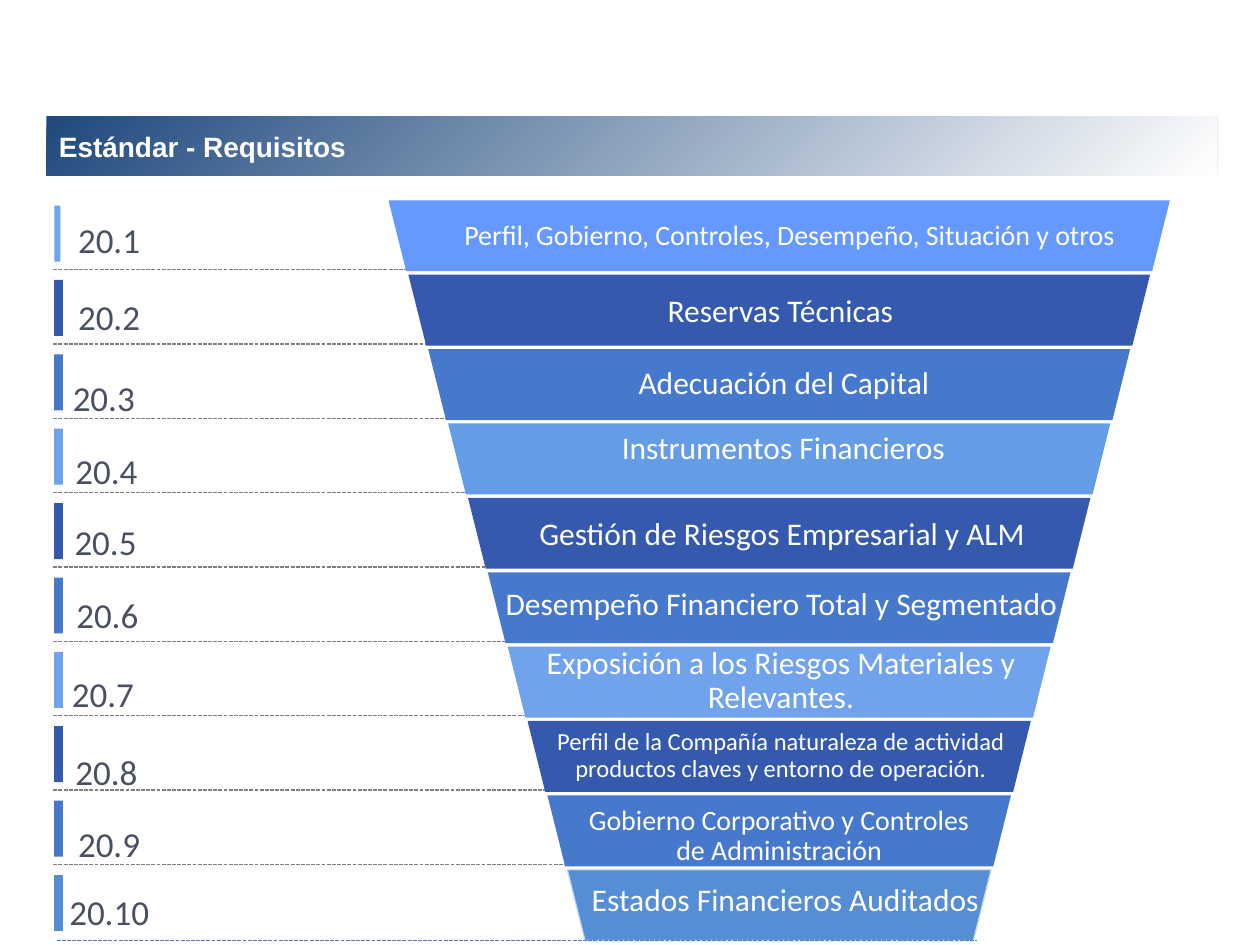
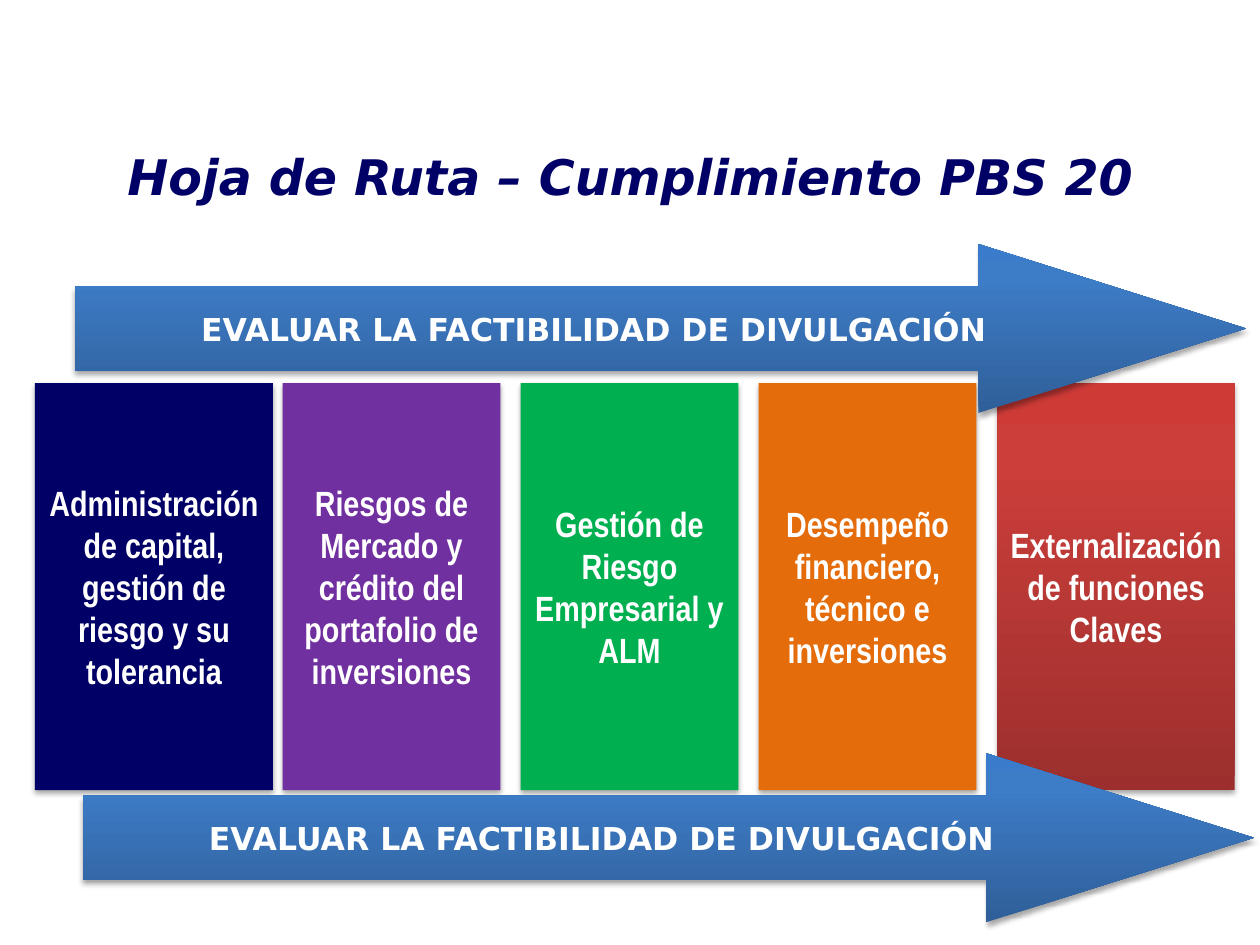
"""Build two slides on the PBS 20 disclosure standard: its requirements funnel and its roadmap."""
from lxml import etree
from pptx import Presentation
from pptx.dml.color import RGBColor as RGB
from pptx.enum.dml import MSO_LINE as DASH
from pptx.enum.shapes import MSO_CONNECTOR as CONN, MSO_SHAPE as SHAPE
from pptx.enum.text import MSO_ANCHOR as ANCHOR, MSO_AUTO_SIZE as AUTO, PP_ALIGN as ALIGN
from pptx.oxml.ns import qn
from pptx.util import Pt

COLORS = {
    "white": "FFFFFF", "number": "495061", "rule": "7F7F7F", "last_rule": "4B7EBC",
    "periwinkle": "6699FF", "royal": "3459AD", "blue": "4678CC", "sky": "649CE6",
    "light": "70A3EB", "steel": "558ED5", "pale": "C6D9F1", "band": "1F497D",
    "navy": "000066", "purple": "7030A0", "green": "00B050", "orange": "E46C0A",
}
RED_STOPS = [(0, "9C2F2D"), (80, "CB3E3A"), (100, "CE3B37")]
ARROW_STOPS = [(0, "2F5F99"), (80, "3D7CC7"), (100, "3A7CCB")]
BAND_STOPS = [(0, COLORS["white"]), (100, COLORS["band"])]

FUNNEL_TOP, FUNNEL_LEFT, FUNNEL_WIDTH = 114.5, 222, 446.5
ROW_PITCH, ROW_HEIGHT, ROW_INSET = 42.5, 40.5, 11.35

REQUIREMENTS = [
    ("Perfil, Gobierno, Controles, Desempeño, Situación y otros", 16, 1,
     "periwinkle", "light", (244, 120.5, 414.5), (37.5, 121.5)),
    ("Reservas Técnicas", 18, 1,
     "royal", "royal", (245.5, 162.5, 401), (37.5, 165.5)),
    ("Adecuación del Capital", 18, 0.9,
     "blue", "blue", (256.5, 206.5, 383), (34.5, 211.5)),
    ("Instrumentos Financieros", 18, 0.9,
     "sky", "light", (268, 243.5, 359.5), (36, 253.5)),
    ("Gestión de Riesgos Empresarial y ALM", 18, 0.9,
     "royal", "royal", (282, 292.5, 330), (35.5, 294)),
    ("Desempeño Financiero Total y Segmentado", 18, 0.9,
     "blue", "blue", (263.5, 332.5, 366), (36.5, 335.5)),
    ("Exposición a los Riesgos Materiales y Relevantes.", 18, 0.9,
     "light", "light", (301.5, 366.5, 289.5), (34, 381)),
    ("Perfil de la Compañía naturaleza de actividad productos claves y entorno de operación.",
     14, 0.9, "royal", "royal", (301.5, 413.5, 289.5), (36, 425.5)),
    ("Gobierno Corporativo y Controles de Administración", 16, 0.9,
     "blue", "blue", (323.5, 457, 243.5), (37.5, 466.5)),
    ("Estados Financieros Auditados", 18, 0.9,
     "steel", "steel", (327, 502, 243.5), (32.5, 505.5)),
]

PILLARS = [
    ("Administración de capital, gestión de riesgo y su tolerancia", "navy", 20, 136),
    ("Riesgos de Mercado y crédito del portafolio de inversiones", "purple", 161.5, 124.5),
    ("Gestión de Riesgo Empresarial y ALM", "green", 297.5, 124.5),
    ("Desempeño financiero, técnico e inversiones", "orange", 433.5, 124.5),
    ("Externalización de funciones Claves", RED_STOPS, 570, 135.5),
]


def rgb(name):
    return RGB.from_string(COLORS[name])


def add_gradient(sp, stops, direction):
    """Fill with (percent, hex) stops; direction is degrees, or "corner" for a radial fill."""
    sp.fill.gradient()
    spPr = sp.element.spPr
    grad = etree.Element(qn("a:gradFill"), rotWithShape="1")
    gs_list = etree.SubElement(grad, qn("a:gsLst"))
    for percent, color in stops:
        gs = etree.SubElement(gs_list, qn("a:gs"), pos=str(percent * 1000))
        etree.SubElement(gs, qn("a:srgbClr"), val=color)
    if direction == "corner":
        radial = etree.SubElement(grad, qn("a:path"), attrib={"path": "circle"})
        etree.SubElement(radial, qn("a:fillToRect"), l="100000", t="100000")
    else:
        etree.SubElement(grad, qn("a:lin"), ang=str(direction * 60000), scaled="0")
    spPr.replace(spPr.find(qn("a:gradFill")), grad)


def add_shadow(sp):
    effects = sp.element.spPr.find(qn("a:effectLst"))
    shadow = etree.SubElement(effects, qn("a:outerShdw"), blurRad=str(Pt(3.1)),
                              dist=str(Pt(1.8)), dir="5400000", rotWithShape="0")
    color = etree.SubElement(shadow, qn("a:srgbClr"), val="000000")
    etree.SubElement(color, qn("a:alpha"), val="35000")


def write(sp, text, size, face, color="white", bold=False, italic=False,
          align=ALIGN.CENTER, anchor=ANCHOR.MIDDLE, spacing=None):
    tf = sp.text_frame
    tf.word_wrap, tf.auto_size, tf.vertical_anchor = True, AUTO.NONE, anchor
    p = tf.paragraphs[0]
    p.text, p.alignment, p.line_spacing = text, align, spacing
    p.font.size, p.font.name = Pt(size), face
    p.font.bold, p.font.italic = bold, italic
    p.font.color.rgb = rgb(color)


def add_block(s, kind, x, y, w, h, fill):
    """Add a borderless shape, with a colour name or gradient stops as its fill."""
    sp = s.shapes.add_shape(kind, Pt(x), Pt(y), Pt(w), Pt(h))
    sp.shadow.inherit = False
    sp.line.fill.background()
    if isinstance(fill, str):
        sp.fill.solid()
        sp.fill.fore_color.rgb = rgb(fill)
    else:
        add_gradient(sp, fill, 270)
    return sp


def add_label(s, text, x, y, w, h, size, **style):
    box = s.shapes.add_textbox(Pt(x), Pt(y), Pt(w), Pt(h))
    write(box, text, size, "Calibri", anchor=ANCHOR.TOP, **style)


def add_rule(s, x1, x2, y, color):
    line = s.shapes.add_connector(CONN.STRAIGHT, Pt(x1), Pt(y), Pt(x2), Pt(y))
    line.line.color.rgb = rgb(color)
    line.line.width = Pt(0.75)
    line.line.dash_style = DASH.SQUARE_DOT
    etree.SubElement(line.element.spPr, qn("a:effectLst"))


def add_title(s, text, x, y, w, h, size, face, **style):
    title = s.shapes.title
    title.left, title.top, title.width, title.height = Pt(x), Pt(y), Pt(w), Pt(h)
    write(title, text, size, face, bold=True, **style)
    return title


def add_requirement(s, i, requirement):
    text, size, spacing, fill, bar, label_at, number_at = requirement
    top, left = FUNNEL_TOP + i * ROW_PITCH, FUNNEL_LEFT + i * ROW_INSET
    last = i == len(REQUIREMENTS) - 1
    if not last:
        add_rule(s, 30.5, left + 29, top + 39.5, "rule")
    level = add_block(s, SHAPE.TRAPEZOID, left, top,
                      FUNNEL_WIDTH - 2 * i * ROW_INSET, ROW_HEIGHT, fill)
    level.rotation = 180
    if last:
        level.line.color.rgb = rgb("pale")
        level.line.width = Pt(0.75)
        add_rule(s, 32.5, 558.5, top + ROW_HEIGHT, "last_rule")
    add_label(s, text, *label_at, 27, size, spacing=spacing)
    add_block(s, SHAPE.RECTANGLE, 31, top + 3, 5 if i else 3.5, 32, bar)
    add_label(s, f"20.{i + 1}", *number_at, 247.5, 31.5, 20,
              color="number", align=ALIGN.LEFT)


def add_pillar(s, text, fill, x, w):
    sp = add_block(s, SHAPE.RECTANGLE, x, 219, w, 232.5, fill)
    add_shadow(sp)
    write(sp, text, 20, "Arial Narrow", bold=True)


def add_arrow(s, x, y):
    sp = add_block(s, SHAPE.RIGHT_ARROW, x, y, 669, 96.5, ARROW_STOPS)
    sp.adjustments[0], sp.adjustments[1] = 0.5, 1.585
    add_shadow(sp)
    write(sp, "EVALUAR LA FACTIBILIDAD DE DIVULGACIÓN", 18, "DejaVu Sans", bold=True)


def build_requirements(s):
    band = add_title(s, "Estándar - Requisitos", 26.5, 66.5, 669, 34, 16, "Arial",
                     align=ALIGN.LEFT)
    add_gradient(band, BAND_STOPS, "corner")
    for i, requirement in enumerate(REQUIREMENTS):
        add_requirement(s, i, requirement)


def build_roadmap(s):
    add_title(s, "Hoja de Ruta – Cumplimiento PBS 20", 36, 55.5, 648, 90, 28,
              "DejaVu Sans", color="navy", italic=True)
    for pillar in PILLARS:
        add_pillar(s, *pillar)
    add_arrow(s, 47.5, 430.5)
    add_arrow(s, 43, 139.5)


def main():
    prs = Presentation()
    prs.slide_width, prs.slide_height = Pt(720), Pt(540)
    for build in (build_requirements, build_roadmap):
        build(prs.slides.add_slide(prs.slide_layouts[5]))
    prs.save("out.pptx")


if __name__ == "__main__":
    main()
